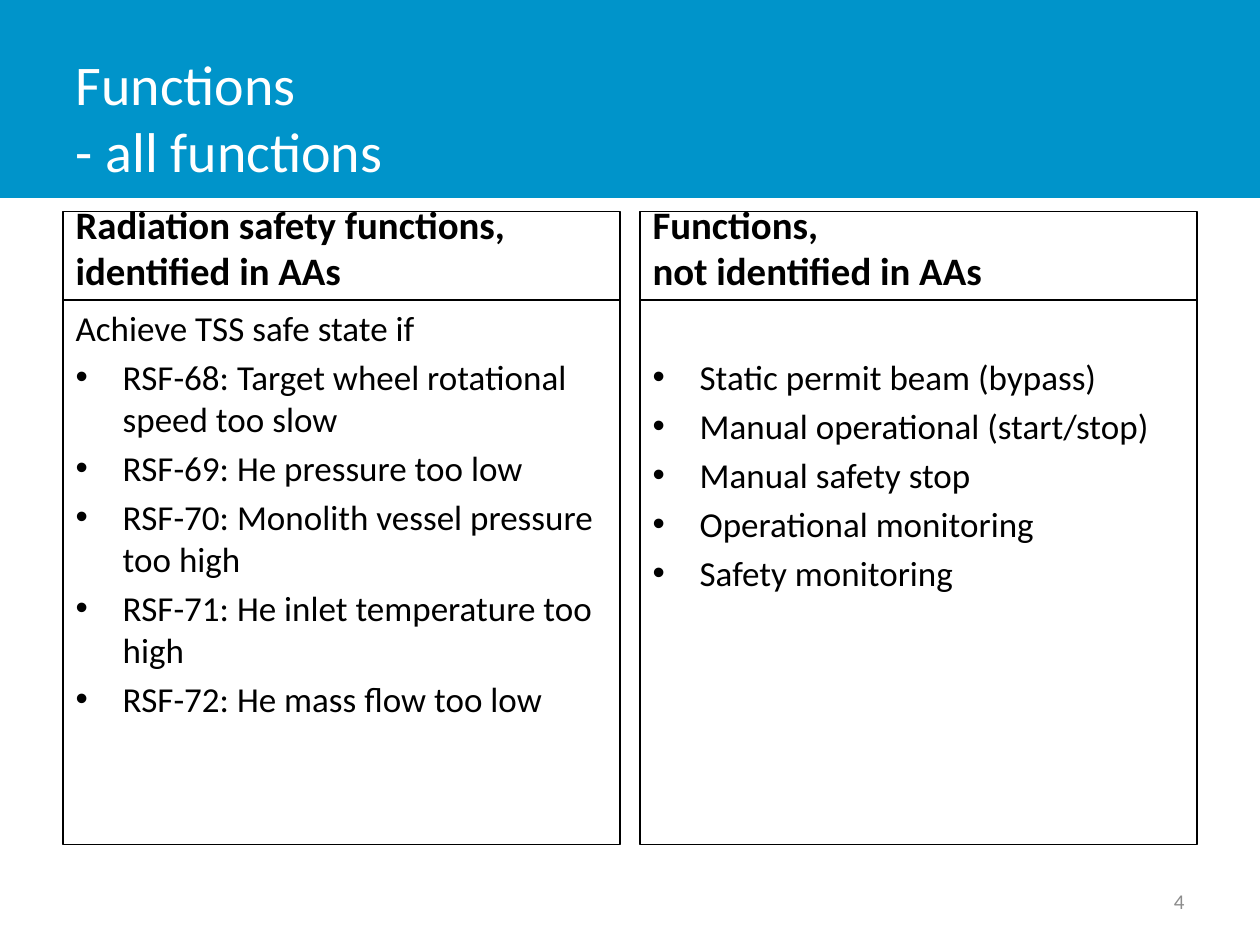
from lxml.etree import SubElement
from pptx import Presentation
from pptx.dml.color import RGBColor
from pptx.enum.shapes import MSO_SHAPE
from pptx.enum.text import MSO_ANCHOR, MSO_AUTO_SIZE, PP_ALIGN
from pptx.oxml.ns import qn
from pptx.util import Cm, Pt

BLUE = RGBColor(0x00, 0x94, 0xCA)
WHITE = RGBColor(0xFF, 0xFF, 0xFF)
BLACK = RGBColor(0x00, 0x00, 0x00)
GREY = RGBColor(0x8C, 0x8C, 0x8C)

MARGIN = 1.27
COLUMN_WIDTH = 11.23
COLUMN_STEP = 11.63
HEAD_TOP, HEAD_HEIGHT = 4.27, 1.78
LIST_HEIGHT = 10.97
HANG = Cm(0.95)

# Heading, introductory line, bullets and top inset (cm) of each column
COLUMNS = [
    ("Radiation safety functions, identified in AAs",
     "Achieve TSS safe state if",
     ["RSF-68: Target wheel rotational speed too slow",
      "RSF-69: He pressure too low",
      "RSF-70: Monolith vessel pressure too high",
      "RSF-71: He inlet temperature too high",
      "RSF-72: He mass flow too low"], 0.13),
    ("Functions,\vnot identified in AAs",
     None,
     ["Static permit beam (bypass)",
      "Manual operational (start/stop)",
      "Manual safety stop",
      "Operational monitoring",
      "Safety monitoring"], 1.12),
]


def place(shape, left, top, width, height, anchor):
    shape.left, shape.top = Cm(left), Cm(top)
    shape.width, shape.height = Cm(width), Cm(height)
    frame = shape.text_frame
    frame.word_wrap = True
    frame.auto_size = MSO_AUTO_SIZE.NONE
    frame.vertical_anchor = anchor
    return frame


def style(para, size, color, bold=False):
    para.font.name = "Calibri"
    para.font.size = Pt(size)
    para.font.color.rgb = color
    para.font.bold = bold


deck = Presentation()
deck.slide_width, deck.slide_height = Cm(25.4), Cm(19.05)
page = deck.slides.add_slide(deck.slide_layouts[4])
title, *bodies = page.placeholders

# Title on a blue band
band = page.shapes.add_shape(MSO_SHAPE.RECTANGLE, 0, 0, deck.slide_width, Cm(3.99))
band.shadow.inherit = False
band.fill.solid()
band.fill.fore_color.rgb = BLUE
band.line.fill.background()
title.element.addprevious(band.element)

frame = place(title, MARGIN, 0.76, 19.84, 3.18, MSO_ANCHOR.MIDDLE)
frame.text = "Functions\v- all functions"
frame.paragraphs[0].alignment = PP_ALIGN.LEFT
style(frame.paragraphs[0], 32, WHITE)

# Two columns, each a heading box over a list box
for index, (heading, intro, bullets, inset) in enumerate(COLUMNS):
    left = MARGIN + index * COLUMN_STEP
    head, body = bodies[2 * index:2 * index + 2]
    for box in (head, body):
        box.line.color.rgb = BLACK
        box.line.width = Pt(0.75)

    frame = place(head, left, HEAD_TOP, COLUMN_WIDTH, HEAD_HEIGHT, MSO_ANCHOR.BOTTOM)
    frame.text = heading
    frame.paragraphs[0].space_before = Pt(0)
    style(frame.paragraphs[0], 22.2, BLACK, bold=True)

    frame = place(body, left, HEAD_TOP + HEAD_HEIGHT, COLUMN_WIDTH, LIST_HEIGHT,
                  MSO_ANCHOR.TOP)
    frame.margin_top = Cm(inset)
    lines = [intro] + bullets if intro else bullets
    frame.text = "\n".join(lines)
    for number, para in enumerate(frame.paragraphs):
        props = para._p.get_or_add_pPr()
        if lines[number] == intro:
            props.set("marL", "0")
            props.set("indent", "0")
            SubElement(props, qn("a:buNone"))
        else:
            props.set("marL", str(HANG))
            props.set("indent", str(-HANG))
            SubElement(props, qn("a:buFont")).set("typeface", "Arial")
            SubElement(props, qn("a:buChar")).set("char", "•")
        para.space_before = Pt(4 if number else 0)
        style(para, 20, BLACK)

# Page number
number_box = page.shapes.add_textbox(0, 0, 0, 0)
frame = place(number_box, 18.2, 17.66, 5.93, 1.01, MSO_ANCHOR.MIDDLE)
frame.text = "4"
frame.paragraphs[0].alignment = PP_ALIGN.RIGHT
style(frame.paragraphs[0], 12, GREY)

deck.save("out.pptx")
